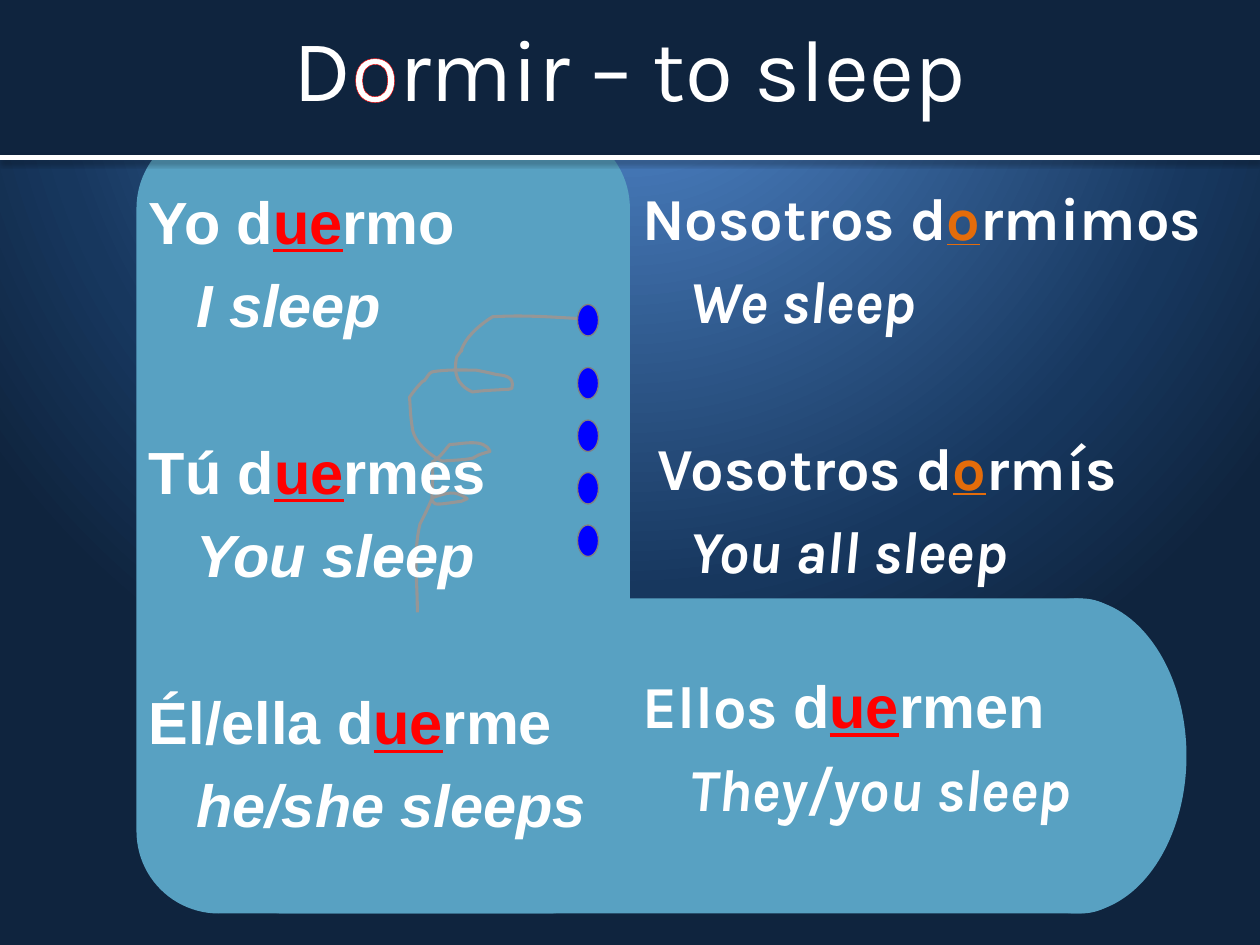
"""Build the stem-changing verb slide for dormir."""
from dataclasses import dataclass

from lxml.etree import SubElement
from pptx import Presentation
from pptx.dml.color import RGBColor
from pptx.enum.shapes import MSO_CONNECTOR, MSO_SHAPE
from pptx.enum.text import MSO_ANCHOR, PP_ALIGN
from pptx.oxml import parse_xml
from pptx.oxml.ns import nsdecls, qn
from pptx.util import Pt

WHITE = RGBColor(0xFF, 0xFF, 0xFF)
NAVY = RGBColor(0x0F, 0x24, 0x3E)
MID_BLUE = RGBColor(0x17, 0x37, 0x5E)
SKY = RGBColor(0x55, 0x8E, 0xD5)
BOOT_BLUE = RGBColor(0x58, 0xA1, 0xC2)
LACE_GREY = RGBColor(0x96, 0x96, 0x96)
EYELET_BLUE = RGBColor(0x00, 0x00, 0xFF)
EYELET_EDGE = RGBColor(0x80, 0x80, 0x80)
RED = RGBColor(0xFF, 0x00, 0x00)
ORANGE = RGBColor(0xE4, 0x6C, 0x0A)

WIDTH, HEIGHT = 720, 540
LACE_START = (330, 182)
LACE_CURVES = [
    (312.5, 181, 299, 180, 281.5, 181),
    (275, 185, 268, 191, 265, 197),
    (260, 207, 268, 194, 261, 204),
    (259, 213, 261, 220, 270, 224),
    (276.5, 223, 283, 223, 289, 222.5),
    (290, 222.5, 291.5, 222.5, 292.5, 222),
    (294.5, 214.5, 287, 214.5, 283.5, 214),
    (280, 213, 272, 211.5, 272, 211.5),
    (264, 211.5, 255.5, 211, 247, 212.5),
    (245, 213, 244, 216, 242.5, 217.5),
    (242, 218, 240.5, 218, 240, 219.5),
    (237.5, 222, 234, 227, 234, 227),
    (234.5, 232.5, 234.5, 238, 235.5, 243.5),
    (236, 252.5, 245.5, 260, 252.5, 263.5),
    (258.5, 263, 263.5, 263, 269.5, 262),
    (270.5, 262, 272, 260.5, 273.5, 260),
    (276, 259, 280, 258, 280, 258),
    (277, 250, 263, 254, 257, 254),
    (253.5, 258, 251.5, 261.5, 247, 264),
    (248.5, 291, 240.5, 289.5, 263.5, 286.5),
    (265, 286, 265.5, 286, 267, 285),
    (260, 280, 255.5, 281.5, 247, 284.5),
    (245, 289.5, 242.5, 294.5, 240, 299.5),
    (236, 317, 238.5, 329, 238.5, 350),
]


@dataclass
class Box:
    left: float
    top: float
    width: float
    height: float

    def lengths(self) -> list:
        return [Pt(v) for v in (self.left, self.top, self.width, self.height)]


@dataclass
class Form:
    subject: str
    stem: str
    vowel: str
    ending: str
    meaning: str
    before: float
    verb_font: str = "Arial"
    mark: RGBColor = RED


@dataclass
class Column:
    box: Box
    font: str
    forms: list[Form]


BOOT = [
    (MSO_SHAPE.ROUNDED_RECTANGLE, Box(132, 342, 516, 180)),
    (MSO_SHAPE.ROUNDED_RECTANGLE, Box(78, 72, 282, 450)),
    (MSO_SHAPE.OVAL, Box(552, 342, 126, 180)),
]
COLUMNS = [
    Column(Box(78, 102, 348, 420), "Arial", [
        Form("Yo d", "", "ue", "rmo", "I sleep", 3.4),
        Form("Tú d", "", "ue", "rmes", "You sleep", 54.6),
        Form("Él/ella d", "", "ue", "rme", "he/she sleeps", 54.6),
    ]),
    Column(Box(360, 100, 366, 420), "Karla", [
        Form("Nosotros d", "", "o", "rmimos", "We sleep", 4, "Karla", ORANGE),
        Form(" Vosotros d", "", "o", "rmís", "You all sleep", 54.4, "Karla", ORANGE),
        Form("Ellos ", "d", "ue", "rmen", "They/you sleep", 47.6),
    ]),
]


def set_background(s) -> None:
    s.background.fill.solid()
    bg = s.element.find(".//" + qn("p:bgPr"))
    stops = "".join(f'<a:gs pos="{pos}"><a:srgbClr val="{color}"/></a:gs>'
                    for pos, color in ((0, SKY), (75000, MID_BLUE), (100000, NAVY)))
    bg.replace(bg[0], parse_xml(
        f'<a:gradFill {nsdecls("a")} rotWithShape="1"><a:gsLst>{stops}</a:gsLst>'
        '<a:path path="circle"><a:fillToRect l="50000" t="-80000" r="50000" b="180000"/>'
        '</a:path></a:gradFill>'))


def add_solid(shapes, kind: MSO_SHAPE, box: Box, color: RGBColor):
    sp = shapes.add_shape(kind, *box.lengths())
    sp.shadow.inherit = False
    sp.fill.solid()
    sp.fill.fore_color.rgb = color
    sp.line.fill.background()
    return sp


def add_lace(s) -> None:
    points = [(Pt(c[i]), Pt(c[i + 1])) for c in LACE_CURVES for i in (0, 2, 4)]
    builder = s.shapes.build_freeform(Pt(LACE_START[0]), Pt(LACE_START[1]))
    builder.add_line_segments(points, close=False)
    sp = builder.convert_to_shape()
    outline = sp._element.find(".//" + qn("a:pathLst"))[0]
    segments = outline.findall(qn("a:lnTo"))
    for i in range(0, len(segments), 3):
        curve = SubElement(outline, qn("a:cubicBezTo"))
        for segment in segments[i:i + 3]:
            curve.append(segment[0])
            outline.remove(segment)
    sp.shadow.inherit = False
    sp.fill.background()
    sp.line.color.rgb = LACE_GREY
    sp.line.width = Pt(1.75)


def add_run(p, text: str):
    r = p.add_run()
    r.text = text
    return r


def add_column(s, column: Column) -> None:
    tf = s.shapes.add_textbox(*column.box.lengths()).text_frame
    tf.word_wrap = True
    for i, form in enumerate(column.forms):
        p = tf.add_paragraph() if i else tf.paragraphs[0]
        p.space_before = Pt(form.before)
        subject_font = column.font if form.stem else form.verb_font
        for text, font in ((form.subject, subject_font), (form.stem, form.verb_font),
                           (form.vowel, form.verb_font), (form.ending, form.verb_font)):
            if text:
                r = add_run(p, text)
                r.font.name = font
                r.font.color.rgb = form.mark if text == form.vowel else WHITE
                if text == form.vowel:
                    r.font.underline = True
        meaning = tf.add_paragraph()
        meaning.space_before = Pt(6.8)
        meaning.font.name = column.font
        meaning.font.color.rgb = WHITE
        meaning.font.italic = True
        meaning._p.get_or_add_pPr().set("marL", str(Pt(27)))
        add_run(meaning, form.meaning)
        for line in (p, meaning):
            line.font.size = Pt(34)
            line.font.bold = True


def add_title(s) -> None:
    add_solid(s.shapes, MSO_SHAPE.RECTANGLE, Box(0, 0, WIDTH, 90), NAVY)
    rule = s.shapes.add_connector(MSO_CONNECTOR.STRAIGHT, Pt(0), Pt(90), Pt(WIDTH), Pt(90))
    rule.line.color.rgb = WHITE
    rule.line.width = Pt(3)
    effects = SubElement(rule._element.spPr, qn("a:effectLst"))
    shadow = SubElement(effects, qn("a:outerShdw"), blurRad=str(Pt(3.1)),
                        dist=str(Pt(1.6)), dir="5400000", rotWithShape="0")
    black = SubElement(shadow, qn("a:srgbClr"), val="000000")
    SubElement(black, qn("a:alpha"), val="38000")
    tf = s.shapes.add_textbox(*Box(0, 0, WIDTH, 76).lengths()).text_frame
    tf.word_wrap = True
    tf.vertical_anchor = MSO_ANCHOR.MIDDLE
    p = tf.paragraphs[0]
    p.alignment = PP_ALIGN.CENTER
    p.font.name = "Karla"
    p.font.size = Pt(50)
    p.font.color.rgb = WHITE
    runs = [add_run(p, text) for text in ("D", "o", "rmir – to sleep")]
    runs[1]._r.get_or_add_rPr().insert(0, parse_xml(
        f'<a:ln {nsdecls("a")} w="{Pt(0.75)}"><a:solidFill><a:srgbClr val="{RED}"/>'
        '</a:solidFill></a:ln>'))


def main() -> None:
    prs = Presentation()
    prs.slide_width, prs.slide_height = Pt(WIDTH), Pt(HEIGHT)
    s = prs.slides.add_slide(prs.slide_layouts[6])
    set_background(s)
    boot = s.shapes.add_group_shape()
    for kind, box in BOOT:
        add_solid(boot.shapes, kind, box, BOOT_BLUE)
    add_lace(s)
    for top in (174, 210, 240, 270, 300):
        eyelet = add_solid(s.shapes, MSO_SHAPE.OVAL, Box(330, top, 12, 18), EYELET_BLUE)
        eyelet.line.color.rgb = EYELET_EDGE
        eyelet.line.width = Pt(0.75)
    for column in COLUMNS:
        add_column(s, column)
    add_title(s)
    prs.save("out.pptx")


if __name__ == "__main__":
    main()
